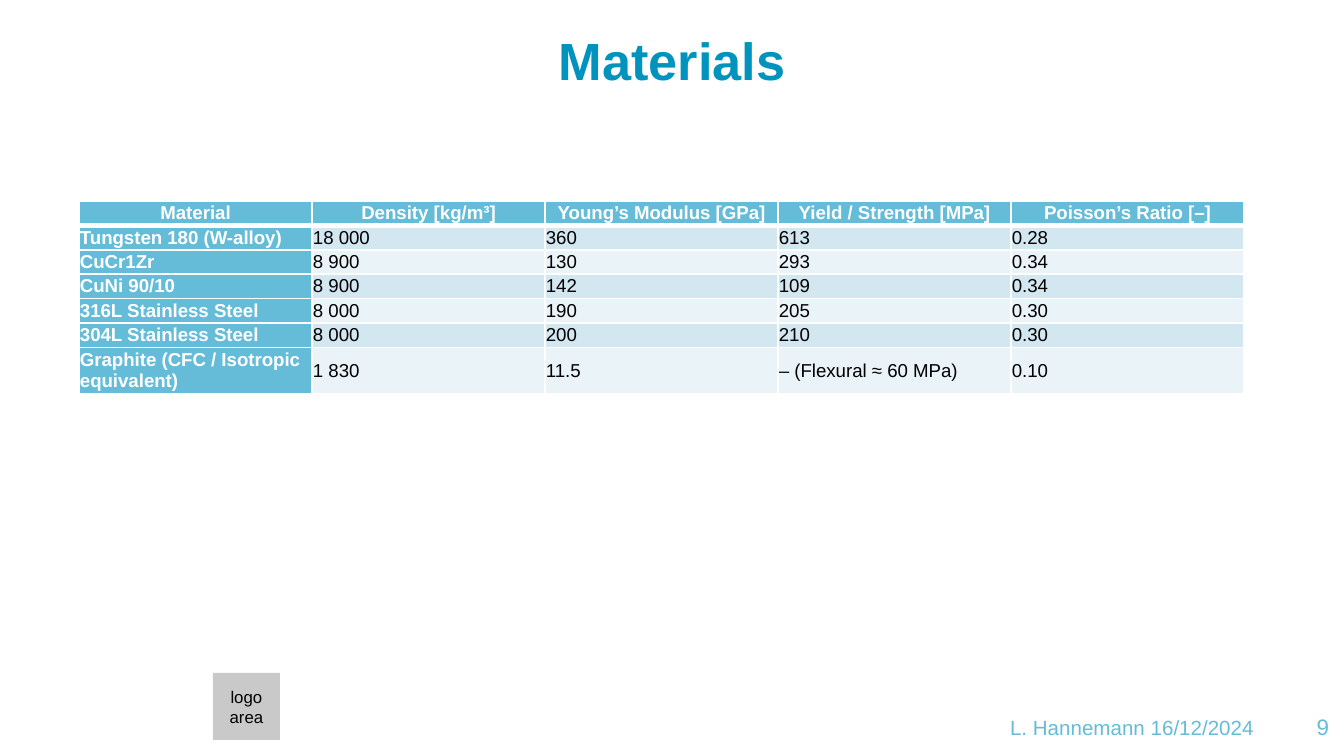
from dataclasses import dataclass

from lxml.etree import SubElement
from pptx import Presentation
from pptx.dml.color import RGBColor
from pptx.enum.shapes import MSO_SHAPE as Shape
from pptx.enum.text import MSO_ANCHOR as Anchor, PP_ALIGN as Align
from pptx.oxml.ns import qn
from pptx.util import Emu, Pt


@dataclass(frozen=True)
class Theme:
    font: str = "Arial"
    title: str = "0093BE"
    accent: str = "64BCD9"
    bands: tuple = ("D3E7F1", "EAF3F8")
    white: str = "FFFFFF"
    black: str = "000000"
    logo: str = "5A5A5A"
    logo_opacity: int = 32
    title_size: int = 28
    footer_size: int = 11
    number_size: int = 12
    table_size: int = 10
    logo_size: int = 9
    border: int = 1
    header_border: int = 3


THEME = Theme()

TITLE = "Materials"
FOOTER = "L. Hannemann 16/12/2024"
PAGE_NUMBER = "9"
LOGO_LABEL = "logo\narea"
MATERIALS = [
    ("Material", "Density [kg/m³]", "Young’s Modulus [GPa]", "Yield / Strength [MPa]", "Poisson’s Ratio [–]"),
    ("Tungsten 180 (W-alloy)", "18 000", "360", "613", "0.28"),
    ("CuCr1Zr", "8 900", "130", "293", "0.34"),
    ("CuNi 90/10", "8 900", "142", "109", "0.34"),
    ("316L Stainless Steel", "8 000", "190", "205", "0.30"),
    ("304L Stainless Steel", "8 000", "200", "210", "0.30"),
    ("Graphite (CFC / Isotropic equivalent)", "1 830", "11.5", "– (Flexural ≈ 60 MPa)", "0.10"),
]

SLIDE_SIZE = (1344, 756)
TITLE_BOX = (90, 20, 1164, 79)
TABLE_LEFT, TABLE_TOP = 79, 201
COLUMN_WIDTH, ROW_HEIGHT = 233, 23
LOGO_BOX = (213, 673, 67, 67)
FOOTER_BOX = (280, 700, 974, 40)
NUMBER_BOX = (1277, 700, 52, 40)


def px(length):
    return Emu(round(length * 914400 / 134.4))


def rgb(value):
    return RGBColor.from_string(value)


def write(frame, text, size, color, bold=False, align=Align.LEFT):
    frame.word_wrap = True
    frame.text = text
    for paragraph in frame.paragraphs:
        paragraph.alignment = align
        font = paragraph.font
        font.name, font.size, font.bold = THEME.font, Pt(size), bold
        font.color.rgb = rgb(color)


def set_insets(holder, inset=0):
    holder.margin_left = holder.margin_right = px(inset)
    holder.margin_top = holder.margin_bottom = px(inset)


def add_label(slide, box, text, anchor, **text_format):
    frame = slide.shapes.add_textbox(*map(px, box)).text_frame
    set_insets(frame)
    frame.vertical_anchor = anchor
    write(frame, text, **text_format)


def add_logo_area(slide):
    logo = slide.shapes.add_shape(Shape.RECTANGLE, *map(px, LOGO_BOX))
    logo.shadow.inherit = False
    logo.line.fill.background()
    logo.fill.solid()
    logo.fill.fore_color.rgb = rgb(THEME.logo)
    tint = next(logo.element.spPr.iter(qn("a:srgbClr")))
    SubElement(tint, qn("a:alpha"), val=str(THEME.logo_opacity * 1000))
    set_insets(logo.text_frame)
    logo.text_frame.vertical_anchor = Anchor.MIDDLE
    write(logo.text_frame, LOGO_LABEL, THEME.logo_size, THEME.black, align=Align.CENTER)


def set_borders(cell, row):
    thin, thick = THEME.border, THEME.header_border
    widths = {
        "lnL": thin,
        "lnR": thin,
        "lnT": thick if row == 1 else thin,
        "lnB": thick if row == 0 else thin,
    }
    properties = cell._tc.get_or_add_tcPr()
    for side, width in widths.items():
        border = SubElement(properties, qn(f"a:{side}"), w=str(Pt(width)))
        SubElement(SubElement(border, qn("a:solidFill")), qn("a:srgbClr"), val=THEME.white)


def add_materials_table(slide):
    row_count, column_count = len(MATERIALS), len(MATERIALS[0])
    size = (column_count * COLUMN_WIDTH, row_count * ROW_HEIGHT)
    table = slide.shapes.add_table(
        row_count, column_count, *map(px, (TABLE_LEFT, TABLE_TOP, *size))
    ).table
    table.first_col = True
    for row, values in enumerate(MATERIALS):
        for column, value in enumerate(values):
            cell = table.cell(row, column)
            heading = row == 0 or column == 0
            set_insets(cell, 1)
            cell.vertical_anchor = Anchor.MIDDLE
            set_borders(cell, row)
            cell.fill.solid()
            cell.fill.fore_color.rgb = rgb(THEME.accent if heading else THEME.bands[(row - 1) % 2])
            write(
                cell.text_frame,
                value,
                THEME.table_size,
                THEME.white if heading else THEME.black,
                bold=heading,
                align=Align.CENTER if row == 0 else Align.LEFT,
            )


def main():
    deck = Presentation()
    deck.slide_width, deck.slide_height = map(px, SLIDE_SIZE)
    slide = deck.slides.add_slide(deck.slide_layouts[6])
    add_logo_area(slide)
    add_label(slide, TITLE_BOX, TITLE, Anchor.MIDDLE, size=THEME.title_size,
              color=THEME.title, bold=True, align=Align.CENTER)
    add_materials_table(slide)
    add_label(slide, FOOTER_BOX, FOOTER, Anchor.BOTTOM, size=THEME.footer_size,
              color=THEME.accent, align=Align.RIGHT)
    add_label(slide, NUMBER_BOX, PAGE_NUMBER, Anchor.BOTTOM, size=THEME.number_size,
              color=THEME.accent, align=Align.RIGHT)
    deck.save("out.pptx")


if __name__ == "__main__":
    main()
